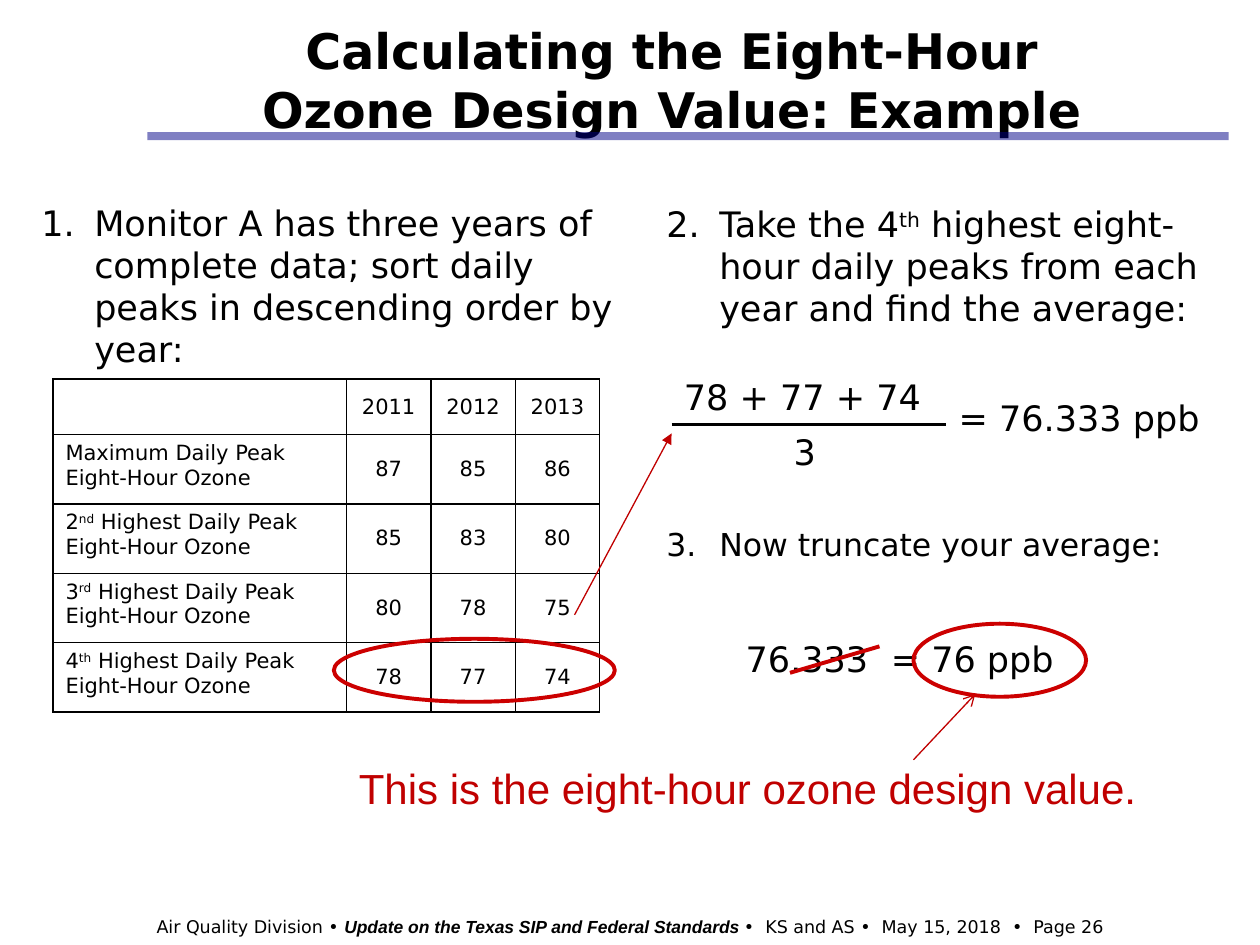
from lxml.etree import SubElement
from pptx import Presentation
from pptx.dml.color import RGBColor
from pptx.enum.shapes import MSO_CONNECTOR as Connector, MSO_SHAPE as Shape
from pptx.enum.text import MSO_ANCHOR as Anchor, PP_ALIGN as Align
from pptx.oxml.ns import qn
from pptx.util import Inches, Pt

BODY, ACCENT = "DejaVu Sans", "Arial"
BLACK, RED, DARK_RED, NAVY = "000000", "CC0000", "C00000", "000086"
WIDE = (" ", "wide")

TITLE = ["Calculating the Eight-Hour Ozone Design Value: Example"]
FOOTER = ["Air Quality Division • ",
          ("Update on the Texas SIP and Federal Standards ", "emphasis"),
          "•", WIDE, "KS and AS •", WIDE, "May 15, 2018", WIDE, "•", WIDE, "Page 26"]

STEPS = [
    (1, ["Monitor A has three years of complete data; sort daily peaks in "
         "descending order by year:"], (0.23, 1.55, 4.77, 1.45), 20),
    (2, ["Take the 4", ("th", "super"), " highest eight-hour daily peaks from each year "
         "and find the average:"], (5.19, 1.56, 4.49, 1.11), 20),
    (3, ["Now truncate your average:"], (5.19, 4.12, 4.21, 0.4), 18),
]
FORMULAS = [
    (["78 + 77 + 74"], (5.33, 2.93, 2.99, 0.44)),
    (["3"], (6.2, 3.37, 0.59, 0.44)),
    (["= 76.333 ppb"], (7.51, 3.1, 2.15, 0.44)),
    (["76.333", WIDE, "= 76 ppb"], (5.82, 5.01, 3.37, 0.44)),
]
CONCLUSION = ["This is the eight-hour ozone design value."]

YEARS = ["2011", "2012", "2013"]
PEAKS = [
    (["Maximum Daily Peak Eight-Hour Ozone"], [87, 85, 86]),
    (["2", ("nd", "super"), " Highest Daily Peak Eight-Hour Ozone"], [85, 83, 80]),
    (["3", ("rd", "super"), " Highest Daily Peak Eight-Hour Ozone"], [80, 78, 75]),
    (["4", ("th", "super"), " Highest Daily Peak Eight-Hour Ozone"], [78, 77, 74]),
]
COLUMN_WIDTHS = [2.33] + [0.67] * 3
ROW_HEIGHTS = [0.44] + [0.55] * 4

LINES = [
    ((1.17, 1.08), (9.75, 1.08), NAVY, 4.5, None, 50),
    ((5.33, 3.37), (7.51, 3.37), BLACK, 1.5, None, 100),
    ((6.98, 5.13), (6.27, 5.34), RED, 2.25, None, 100),
    ((4.56, 4.88), (5.33, 3.44), DARK_RED, 0.75, "triangle", 100),
    ((7.25, 6.03), (7.74, 5.51), DARK_RED, 0.75, "arrow", 100),
]
RINGS = [(2.65, 5.07, 2.23, 0.5), (7.25, 4.95, 1.37, 0.58)]


def color(value):
    return RGBColor.from_string(value)


def write(frame, pieces, size, align=Align.LEFT, font=BODY, ink=BLACK, bold=False):
    paragraph = frame.paragraphs[0]
    paragraph.alignment = align
    for piece in pieces:
        text, style = (piece, None) if isinstance(piece, str) else piece
        run = paragraph.add_run()
        run.text = text
        emphasis = style == "emphasis"
        run.font.name = ACCENT if emphasis else font
        run.font.size = Pt(size)
        run.font.bold = bold or emphasis
        run.font.italic = emphasis
        run.font.color.rgb = color(ink)
        if style == "super":
            run.font._element.set("baseline", "30000")
        elif style == "wide":
            run.font._element.set("spc", str(size * 32))
    return paragraph


def add_text(slide, pieces, place, size, anchor=Anchor.TOP, **style):
    frame = slide.shapes.add_textbox(*map(Inches, place)).text_frame
    frame.word_wrap = True
    frame.vertical_anchor = anchor
    return write(frame, pieces, size, **style)


def add_step(slide, number, pieces, place, size):
    properties = add_text(slide, pieces, place, size)._p.get_or_add_pPr()
    properties.set("marL", str(Inches(0.42)))
    properties.set("indent", str(-Inches(0.42)))
    SubElement(properties, qn("a:buAutoNum"), type="arabicPeriod", startAt=str(number))


def add_line(slide, start, end, ink, width, arrowhead, opacity):
    line = slide.shapes.add_connector(Connector.STRAIGHT, *map(Inches, start + end))
    line.line.color.rgb = color(ink)
    line.line.width = Pt(width)
    outline = line.line._get_or_add_ln()
    if opacity < 100:
        SubElement(outline.find(".//" + qn("a:srgbClr")), qn("a:alpha"),
                   val=str(opacity * 1000))
    if arrowhead:
        SubElement(outline, qn("a:tailEnd"), type=arrowhead)
    SubElement(line._element.spPr, qn("a:effectLst"))


def add_ring(slide, place):
    ring = slide.shapes.add_shape(Shape.OVAL, *map(Inches, place))
    ring.shadow.inherit = False
    ring.fill.background()
    ring.line.color.rgb = color(RED)
    ring.line.width = Pt(2.25)


def add_borders(cell):
    properties = cell._tc.get_or_add_tcPr()
    for position, side in enumerate(("lnL", "lnR", "lnT", "lnB")):
        border = properties.makeelement(qn("a:" + side), {"w": str(Pt(1))})
        properties.insert(position, border)
        fill = SubElement(border, qn("a:solidFill"))
        SubElement(fill, qn("a:srgbClr"), val=BLACK)


def add_peaks(slide):
    rows = [([], YEARS)] + PEAKS
    table = slide.shapes.add_table(
        len(rows), len(COLUMN_WIDTHS), Inches(0.42), Inches(3.01),
        Inches(sum(COLUMN_WIDTHS)), Inches(sum(ROW_HEIGHTS))).table
    table.first_row = table.horz_banding = False
    for column, width in zip(table.columns, COLUMN_WIDTHS):
        column.width = Inches(width)
    for row, height, (label, values) in zip(table.rows, ROW_HEIGHTS, rows):
        row.height = Inches(height)
        for index, pieces in enumerate([label] + [[str(value)] for value in values]):
            cell = row.cells[index]
            cell.fill.background()
            add_borders(cell)
            cell.vertical_anchor = Anchor.MIDDLE if index else Anchor.TOP
            write(cell.text_frame, pieces, 12, Align.CENTER if index else Align.LEFT)


def main():
    deck = Presentation()
    deck.slide_width, deck.slide_height = Inches(10), Inches(7.5)
    slide = deck.slides.add_slide(deck.slide_layouts[6])
    add_text(slide, FOOTER, (0, 7.22, 10, 0.27), 10, align=Align.CENTER)
    add_text(slide, TITLE, (1.58, 0.17, 7.5, 0.92), 28, Anchor.MIDDLE,
             align=Align.CENTER, bold=True)
    add_peaks(slide)
    for step in STEPS:
        add_step(slide, *step)
    for pieces, place in FORMULAS:
        add_text(slide, pieces, place, 20)
    add_text(slide, CONCLUSION, (2.75, 6, 6.44, 0.5), 24, font=ACCENT, ink=DARK_RED)
    for line in LINES:
        add_line(slide, *line)
    for ring in RINGS:
        add_ring(slide, ring)
    deck.save("out.pptx")


if __name__ == "__main__":
    main()
